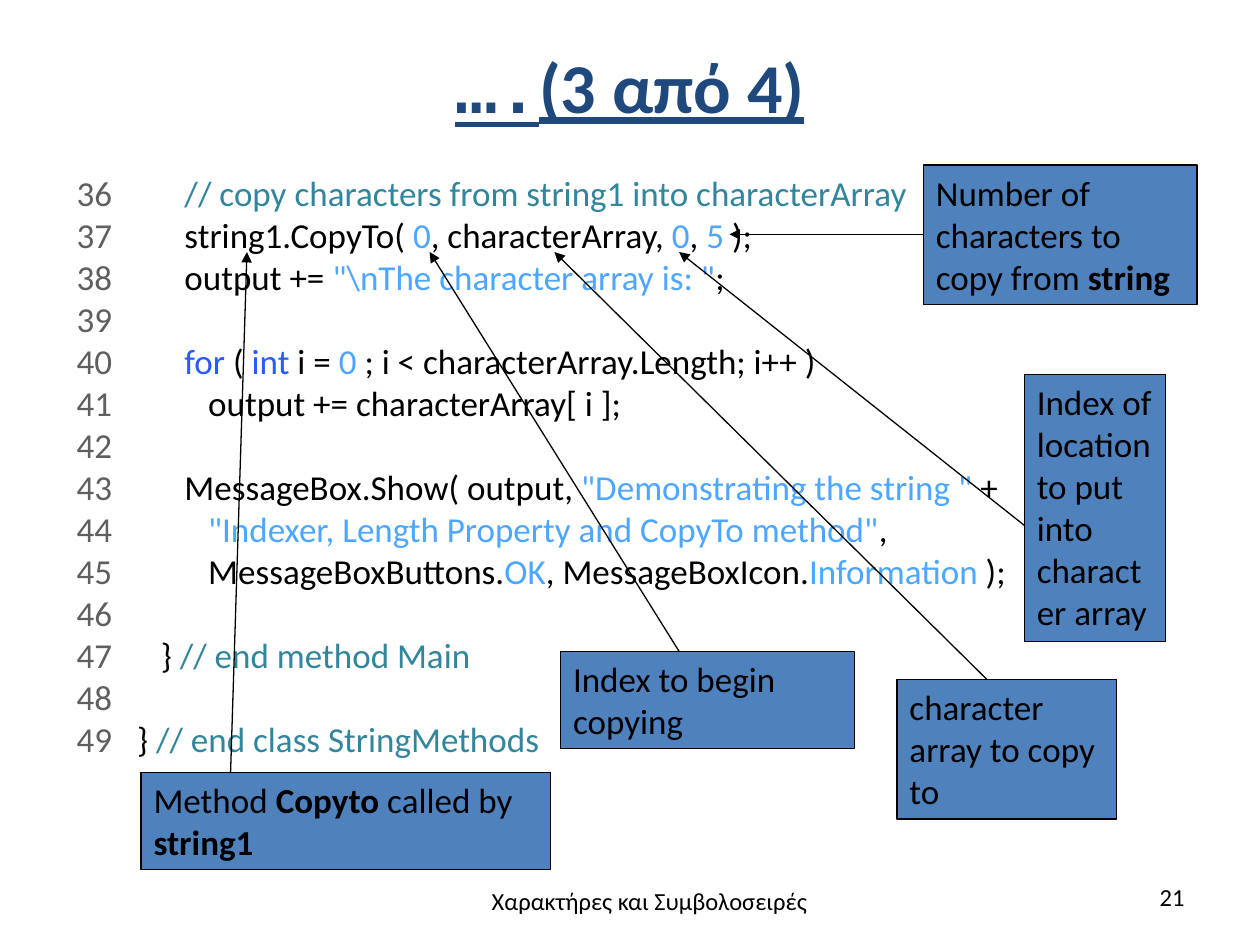
from dataclasses import dataclass
from typing import NamedTuple

from lxml import etree
from pptx import Presentation
from pptx import util as u
from pptx.dml.color import RGBColor
from pptx.enum import shapes, text
from pptx.oxml.ns import qn

COLUMNS, ROWS = 100, 75
CELL = u.Inches(0.1)


@dataclass(frozen=True)
class Theme:
    font: str = "Calibri"
    title_font: str = "Courier New"
    title_size: int = 40
    body_size: int = 20
    footer_size: int = 14
    line_width: float = 0.75
    title: str = "1F497D"
    number: str = "5F5F5F"
    comment: str = "31859C"
    plain: str = "000000"
    literal: str = "4DA6FF"
    keyword: str = "275AFF"
    callout: str = "4F81BD"


THEME = Theme()


class Box(NamedTuple):
    column: float
    row: float
    columns: float
    rows: float


class Point(NamedTuple):
    column: float
    row: float


class Span(NamedTuple):
    text: str
    color: str = THEME.plain
    bold: bool = False
    font: str = THEME.font
    underline: bool = False


class CodeLine(NamedTuple):
    level: int = 0
    spans: tuple[Span, ...] = ()


class Callout(NamedTuple):
    box: Box
    spans: tuple[Span, ...]
    start: Point
    tip: Point


def comment(words: str) -> Span:
    return Span(words, THEME.comment)


def literal(words: str) -> Span:
    return Span(words, THEME.literal)


def keyword(words: str) -> Span:
    return Span(words, THEME.keyword)


FIRST_NUMBER = 36
FIRST_TAB, TAB_STEP = 4.8, 1.88

CODE = (
    CodeLine(2, (comment("// copy characters from string1 into characterArray"),)),
    CodeLine(2, (Span("string1.CopyTo( "), literal("0"), Span(", characterArray, "),
                 literal("0"), Span(", "), literal("5"), Span(" );"))),
    CodeLine(2, (Span("output += "), literal('"\\nThe character array is: "'), Span(";"))),
    CodeLine(),
    CodeLine(2, (keyword("for"), Span(" ( "), keyword("int "), Span("i = "), literal("0"),
                 Span(" ; i < characterArray.Length; i++ )"))),
    CodeLine(3, (Span("output += characterArray[ i ];"),)),
    CodeLine(),
    CodeLine(2, (Span("MessageBox.Show( output, "),
                 literal('"Demonstrating the string "'), Span(" +"))),
    CodeLine(3, (literal('"Indexer, Length Property and CopyTo method"'), Span(","))),
    CodeLine(3, (Span("MessageBoxButtons."), literal("OK"), Span(", MessageBoxIcon."),
                 literal("Information"), Span(" );"))),
    CodeLine(),
    CodeLine(1, (Span("} "), comment("// end method Main"))),
    CodeLine(),
    CodeLine(0, (Span("} "), comment("// end class StringMethods"))),
)

CALLOUTS = (
    Callout(Box(11.2, 61.3, 32.5, 7.7),
            (Span("Method "), Span("Copyto ", bold=True), Span("called by"),
             Span(" string1", bold=True)),
            Point(18.3, 61.3), Point(19.6, 20)),
    Callout(Box(44.5, 51.7, 23.3, 7.7), (Span("Index to begin copying"),),
            Point(53.9, 51.7), Point(34.1, 20)),
    Callout(Box(71.2, 53.9, 17.4, 11.1), (Span("character array to copy to"),),
            Point(78.3, 53.9), Point(44, 20)),
    Callout(Box(81.3, 29.7, 11.2, 21.2),
            (Span("Index of location to put into character array"),),
            Point(81.3, 41.7), Point(53.9, 20)),
    Callout(Box(73.3, 13.1, 21.7, 11.1),
            (Span("Number of characters to copy from"), Span(" string", bold=True)),
            Point(73.3, 18.6), Point(57.9, 18.6)),
)


def cells(*counts: float) -> list[int]:
    return [round(count * CELL) for count in counts]


def write(paragraph, spans: tuple[Span, ...], size: int) -> None:
    for span in spans:
        run = paragraph.add_run()
        run.text = span.text
        run.font.size = u.Pt(size)
        run.font.name = span.font
        run.font.bold = span.bold
        run.font.underline = span.underline
        run.font.color.rgb = RGBColor.from_string(span.color)


def add_label(slide, box: Box, spans: tuple[Span, ...], size: int, alignment,
              anchor=text.MSO_ANCHOR.TOP) -> None:
    frame = slide.shapes.add_textbox(*cells(*box)).text_frame
    frame.word_wrap = True
    frame.vertical_anchor = anchor
    frame.paragraphs[0].alignment = alignment
    write(frame.paragraphs[0], spans, size)


def add_tab_stop(paragraph, level: int) -> None:
    properties = paragraph._p.get_or_add_pPr()
    stops = etree.SubElement(properties, qn("a:tabLst"))
    position = cells(FIRST_TAB + level * TAB_STEP)[0]
    etree.SubElement(stops, qn("a:tab"), pos=str(position), algn="l")


def add_code(slide, box: Box, lines: tuple[CodeLine, ...]) -> None:
    frame = slide.shapes.add_textbox(*cells(*box)).text_frame
    frame.word_wrap = True
    for index, line in enumerate(lines):
        paragraph = frame.add_paragraph() if index else frame.paragraphs[0]
        number = str(FIRST_NUMBER + index)
        if line.spans:
            add_tab_stop(paragraph, line.level)
            number += "\t"
        write(paragraph, (Span(number, THEME.number), *line.spans), THEME.body_size)


def add_arrow(slide, start: Point, tip: Point) -> None:
    arrow = slide.shapes.add_connector(shapes.MSO_CONNECTOR.STRAIGHT, *cells(*start, *tip))
    arrow.line.color.rgb = RGBColor.from_string(THEME.plain)
    arrow.line.width = u.Pt(THEME.line_width)
    etree.SubElement(arrow.line._get_or_add_ln(), qn("a:tailEnd"), type="triangle")
    etree.SubElement(arrow._element.spPr, qn("a:effectLst"))


def add_callout(slide, callout: Callout) -> None:
    shape = slide.shapes.add_shape(shapes.MSO_SHAPE.RECTANGLE, *cells(*callout.box))
    shape.shadow.inherit = False
    shape.fill.solid()
    shape.fill.fore_color.rgb = RGBColor.from_string(THEME.callout)
    shape.line.color.rgb = RGBColor.from_string(THEME.plain)
    shape.line.width = u.Pt(THEME.line_width)
    frame = shape.text_frame
    frame.word_wrap = True
    frame.vertical_anchor = text.MSO_ANCHOR.TOP
    frame.paragraphs[0].alignment = text.PP_ALIGN.LEFT
    write(frame.paragraphs[0], callout.spans, THEME.body_size)
    add_arrow(slide, callout.start, callout.tip)


def main() -> None:
    presentation = Presentation()
    presentation.slide_width, presentation.slide_height = cells(COLUMNS, ROWS)
    slide = presentation.slides.add_slide(presentation.slide_layouts[6])
    title = (Span("….", THEME.title, True, THEME.title_font, True),
             Span("(3 από 4)", THEME.title, True, THEME.font, True))
    add_label(slide, Box(5, -0.3, 90, 14.2), title, THEME.title_size,
              text.PP_ALIGN.CENTER, text.MSO_ANCHOR.MIDDLE)
    add_code(slide, Box(5.1, 13.1, 89.9, 48.1), CODE)
    for callout in CALLOUTS:
        add_callout(slide, callout)
    add_label(slide, Box(34.1, 69.8, 34.9, 5.2), (Span("Χαρακτήρες και Συμβολοσειρές"),),
              THEME.footer_size, text.PP_ALIGN.CENTER)
    add_label(slide, Box(71.7, 69.5, 23.3, 4), (Span("21"),),
              THEME.footer_size, text.PP_ALIGN.RIGHT)
    presentation.save("out.pptx")


if __name__ == "__main__":
    main()
